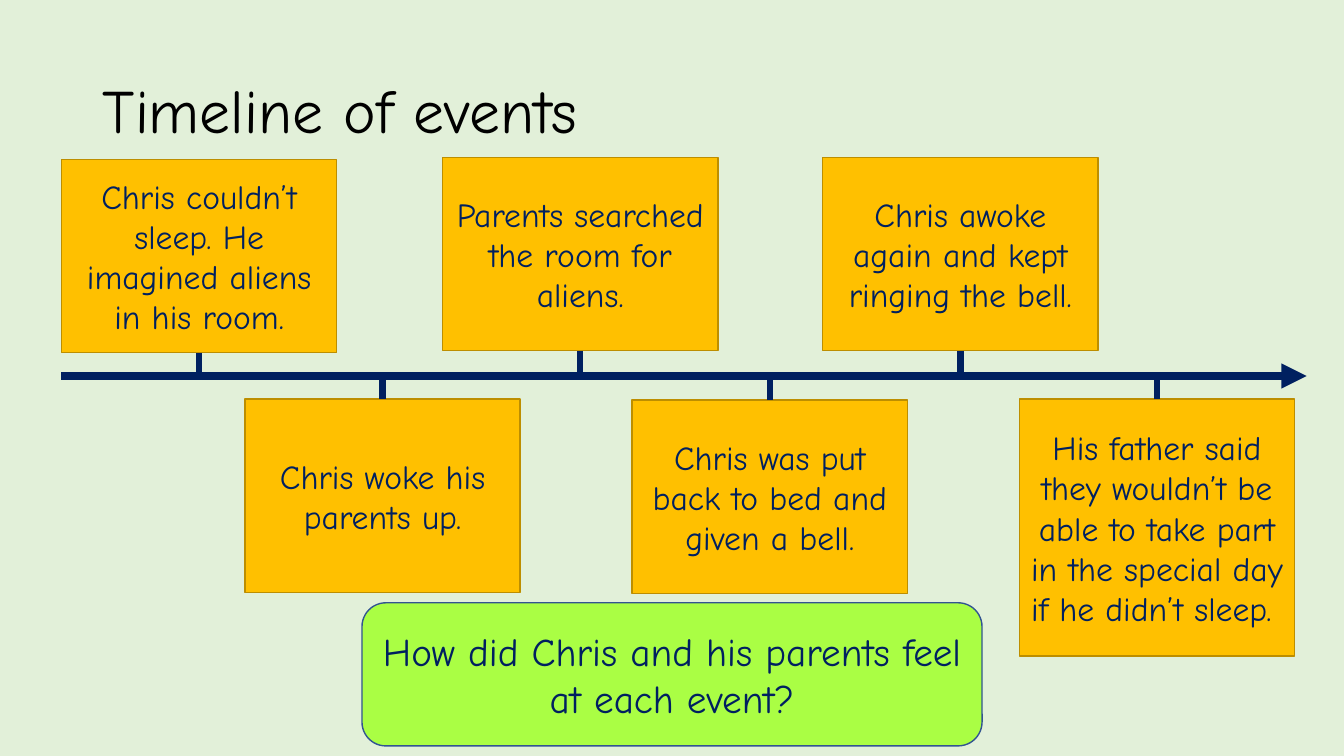
"""Build the timeline of events slide."""
from lxml.etree import SubElement
from pptx import Presentation
from pptx.dml.color import RGBColor
from pptx.enum.shapes import MSO_CONNECTOR, MSO_SHAPE
from pptx.enum.text import MSO_ANCHOR, PP_ALIGN
from pptx.oxml.ns import qn
from pptx.util import Inches, Pt

TITLE = "Timeline of events"
QUESTION = "How did Chris and his parents feel at each event?"
EVENTS = [
    ("Chris couldn’t sleep. He imagined aliens in his room.", 0.61, 1.58, 1.92),
    ("Chris woke his parents up.", 2.43, 3.96, 1.92),
    ("Parents searched the room for aliens.", 4.39, 1.56, 1.92),
    ("Chris was put back to bed and given a bell.", 6.27, 3.97, 1.92),
    ("Chris awoke again and kept ringing the bell.", 8.16, 1.56, 1.92),
    ("His father said they wouldn’t be able to take part in the special day if he didn’t sleep. ",
     10.11, 3.96, 2.55),
]
FONT = "Comic Neue"
NAVY, AMBER, LIME = "002060", "FFC000", "AAFE44"
EVENT_WIDTH = 2.73
AXIS_Y, AXIS_START, AXIS_END = 3.73, 0.61, 12.96
TOP_SIDE, BOTTOM_SIDE = 0, 2


def color(value):
    return RGBColor.from_string(value)


def write(shape, text, size=24, ink=NAVY, align=PP_ALIGN.CENTER, spacing=None):
    frame = shape.text_frame
    frame.word_wrap = True
    frame.vertical_anchor = MSO_ANCHOR.MIDDLE
    para = frame.paragraphs[0]
    para.alignment = align
    para.line_spacing = spacing
    span = para.add_run()
    span.text = text
    span.font.name = FONT
    span.font.size = Pt(size)
    span.font.color.rgb = color(ink)


def add_box(page, kind, left, top, width, height, fill, outline):
    box = page.shapes.add_shape(
        kind, Inches(left), Inches(top), Inches(width), Inches(height))
    box.shadow.inherit = False
    box.fill.solid()
    box.fill.fore_color.rgb = color(fill)
    box.line.color.rgb = color(outline)
    box.line.width = Pt(1)
    return box


def add_line(page, x1, y1, x2, y2, width, arrow=False):
    line = page.shapes.add_connector(
        MSO_CONNECTOR.STRAIGHT, Inches(x1), Inches(y1), Inches(x2), Inches(y2))
    line.line.color.rgb = color(NAVY)
    line.line.width = Pt(width)
    if arrow:
        SubElement(line.line._get_or_add_ln(), qn("a:tailEnd"), type="triangle")
    SubElement(line._element.spPr, qn("a:effectLst"))
    return line


def main():
    deck = Presentation()
    deck.slide_width, deck.slide_height = Inches(13.33), Inches(7.5)
    page = deck.slides.add_slide(deck.slide_layouts[5])
    page.background.fill.solid()
    page.background.fill.fore_color.rgb = color("E2F0D9")

    title = page.shapes.title
    title.left, title.top = Inches(0.92), Inches(0.4)
    title.width, title.height = Inches(11.5), Inches(1.45)
    write(title, TITLE, size=44, ink="000000", align=PP_ALIGN.LEFT, spacing=0.9)

    add_line(page, AXIS_START, AXIS_Y, AXIS_END, AXIS_Y, 6, arrow=True)
    for text, left, top, height in EVENTS:
        box = add_box(page, MSO_SHAPE.RECTANGLE, left, top, EVENT_WIDTH, height,
                      AMBER, "BD8E00")
        write(box, text)
        above = top < AXIS_Y
        edge = top + height if above else top
        middle = left + EVENT_WIDTH / 2
        tick = add_line(page, middle, edge, middle, AXIS_Y, 4.5)
        tick.begin_connect(box, BOTTOM_SIDE if above else TOP_SIDE)

    question = add_box(page, MSO_SHAPE.ROUNDED_RECTANGLE, 3.59, 5.98, 6.15, 1.42,
                       LIME, "325491")
    write(question, QUESTION, size=28)
    deck.save("out.pptx")


if __name__ == "__main__":
    main()
